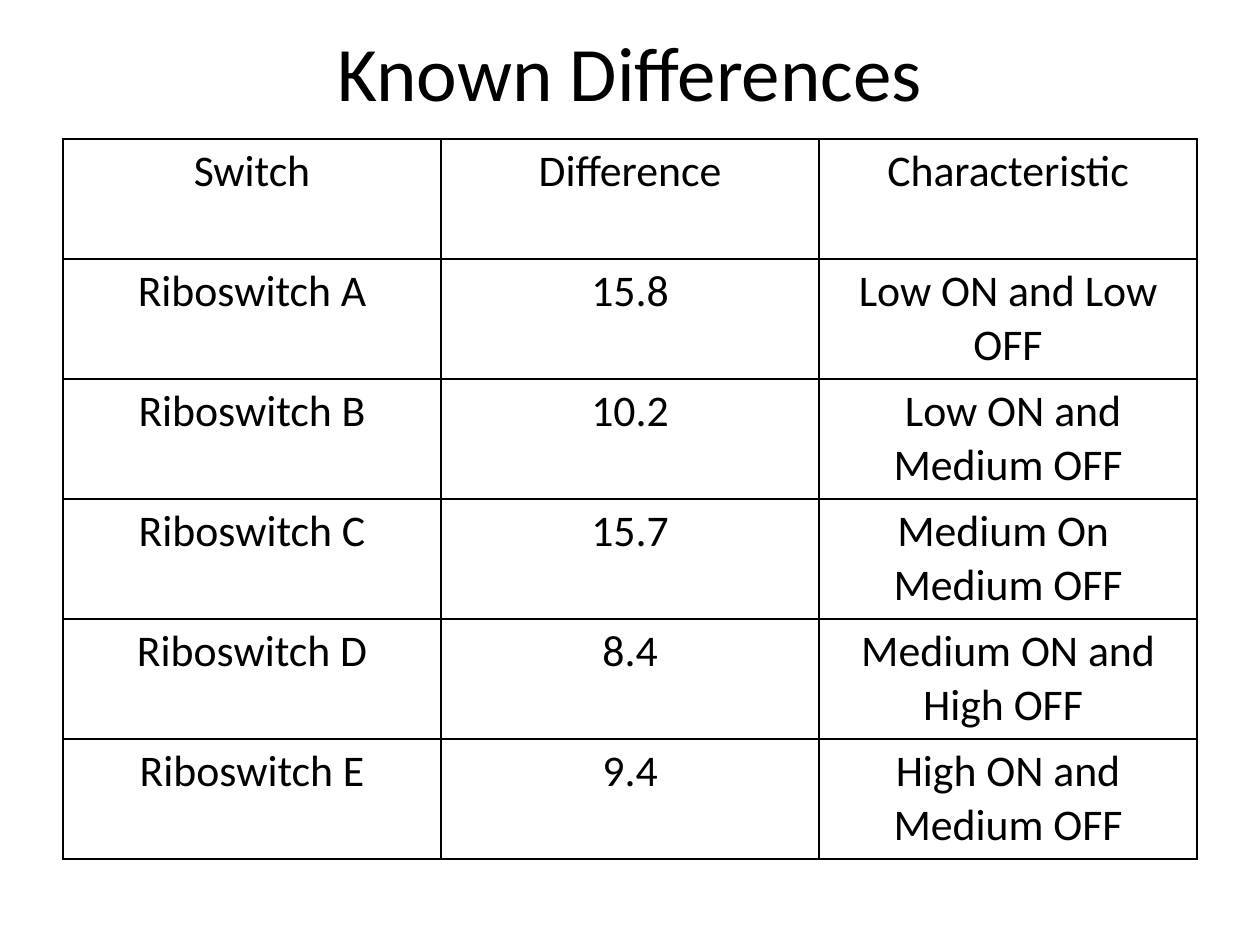
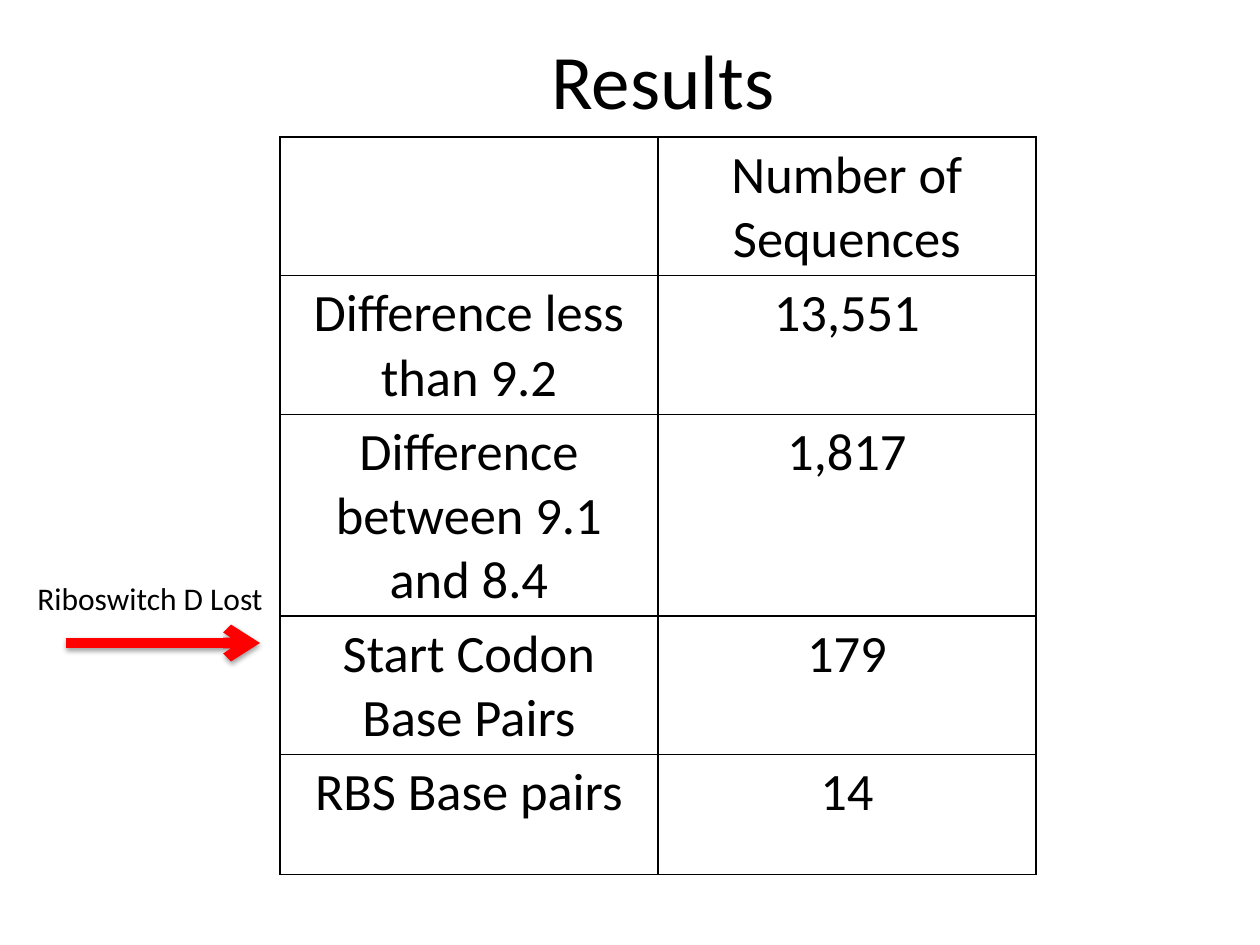
from lxml.etree import SubElement
from pptx import Presentation
from pptx.dml.color import RGBColor
from pptx.enum.shapes import MSO_CONNECTOR
from pptx.enum.text import MSO_ANCHOR, PP_ALIGN
from pptx.oxml import parse_xml
from pptx.oxml.ns import nsdecls, qn
from pptx.util import Emu, Pt

EMU_PER_PX = 914400 / 126
FONT = "Calibri"
BLACK, WHITE, RED = "000000", "FFFFFF", "FF0000"
COLUMN_WIDTH, ROW_HEIGHT = 378, 120


def px(length):
    return Emu(round(length * EMU_PER_PX))


def write(text_frame, text, size, alignment):
    text_frame.text = text
    for paragraph in text_frame.paragraphs:
        paragraph.alignment = alignment
        paragraph.font.name = FONT
        paragraph.font.size = Pt(size)
        paragraph.font.color.rgb = RGBColor.from_string(BLACK)


known_differences = [
    ("Switch", "Difference", "Characteristic"),
    ("Riboswitch A", "15.8", "Low ON and Low OFF"),
    ("Riboswitch B", "10.2", " Low ON and Medium OFF"),
    ("Riboswitch C", "15.7", "Medium On \nMedium OFF"),
    ("Riboswitch D", "8.4", "Medium ON and High OFF "),
    ("Riboswitch E", "9.4", "High ON and Medium OFF"),
]
results = [
    ("", "Number of Sequences"),
    ("Difference less than 9.2", "13,551"),
    ("Difference between 9.1 and 8.4", "1,817"),
    ("Start Codon Base Pairs", "179"),
    ("RBS Base pairs", "14"),
]
# title, title left and top, table left and top, text size, cell fill, rows
pages = [
    ("Known Differences", 63, -8, 63, 139, 25, WHITE, known_differences),
    ("Results", 96, 0, 280, 137, 30, None, results),
]

presentation = Presentation()
presentation.slide_width, presentation.slide_height = px(1260), px(945)

for title, title_left, title_top, left, top, size, fill, rows in pages:
    slide = presentation.slides.add_slide(presentation.slide_layouts[6])
    title_box = slide.shapes.add_textbox(px(title_left), px(title_top), px(1134), px(158))
    title_box.text_frame.word_wrap = True
    title_box.text_frame.vertical_anchor = MSO_ANCHOR.MIDDLE
    write(title_box.text_frame, title, 44, PP_ALIGN.CENTER)

    column_count = len(rows[0])
    table = slide.shapes.add_table(
        len(rows), column_count, px(left), px(top),
        px(column_count * COLUMN_WIDTH), px(len(rows) * ROW_HEIGHT)).table
    table.first_row = table.horz_banding = False
    for column in table.columns:
        column.width = px(COLUMN_WIDTH)
    for row_index, row in enumerate(rows):
        table.rows[row_index].height = px(ROW_HEIGHT)
        for column_index, text in enumerate(row):
            cell = table.cell(row_index, column_index)
            write(cell.text_frame, text, size, PP_ALIGN.CENTER)
            properties = cell._tc.get_or_add_tcPr()
            for side in ("a:lnL", "a:lnR", "a:lnT", "a:lnB"):
                border = SubElement(properties, qn(side), w=str(Pt(1)))
                SubElement(SubElement(border, qn("a:solidFill")), qn("a:srgbClr"), val=BLACK)
            if fill:
                cell.fill.solid()
                cell.fill.fore_color.rgb = RGBColor.from_string(fill)
            else:
                cell.fill.background()

# The arrow and its label belong to the last slide, Results
arrow = slide.shapes.add_connector(MSO_CONNECTOR.STRAIGHT, px(66), px(643), px(260), px(643))
arrow.line.color.rgb = RGBColor.from_string(RED)
arrow.line.width = Pt(6)
SubElement(arrow.line._get_or_add_ln(), qn("a:tailEnd"), type="arrow")
arrow._element.spPr.append(parse_xml(
    f'<a:effectLst {nsdecls("a")}>'
    f'<a:outerShdw blurRad="{Pt(3.1)}" dist="{Pt(1.6)}" dir="5400000" rotWithShape="0">'
    f'<a:srgbClr val="{BLACK}"><a:alpha val="38000"/></a:srgbClr>'
    '</a:outerShdw></a:effectLst>'))

label = slide.shapes.add_textbox(px(25), px(573), px(255), px(50))
label.text_frame.word_wrap = False
write(label.text_frame, "Riboswitch D Lost", 18, PP_ALIGN.LEFT)

presentation.save("out.pptx")
